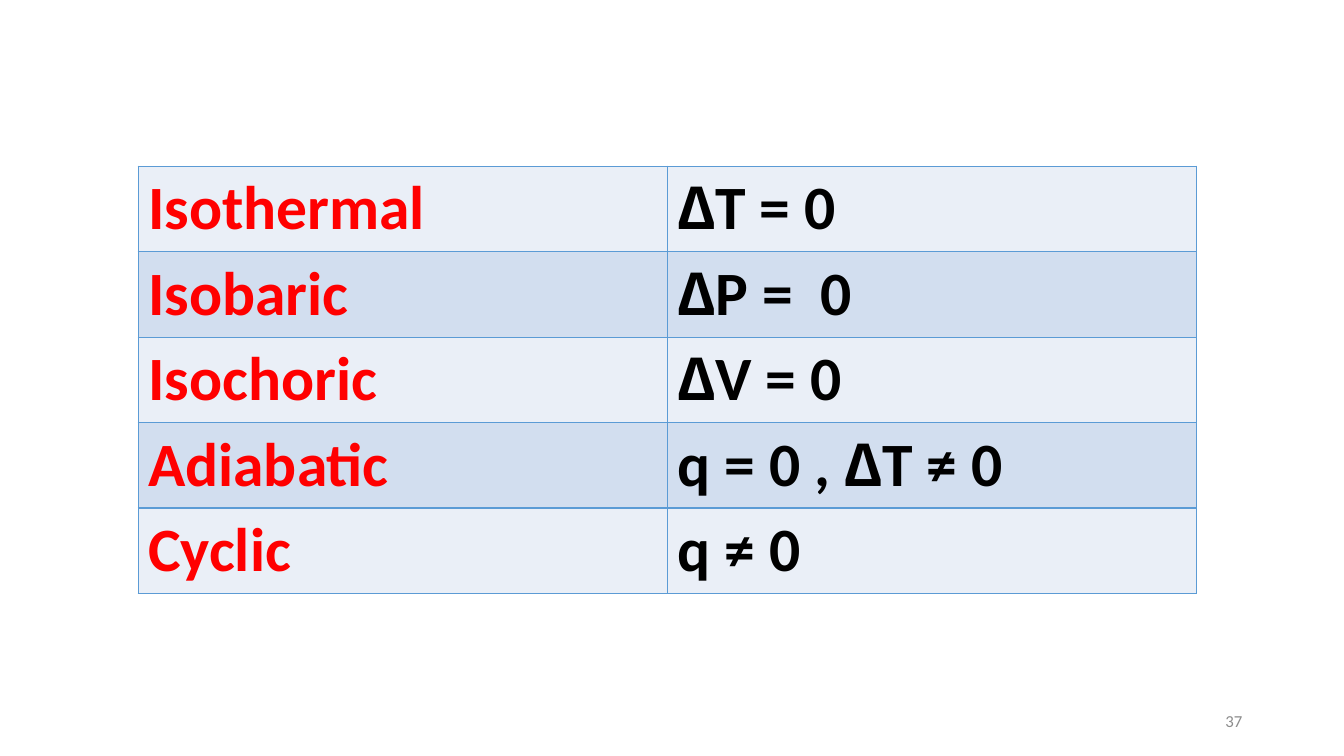
from lxml.etree import SubElement
from pptx import Presentation
from pptx.dml.color import RGBColor
from pptx.enum.text import MSO_ANCHOR, PP_ALIGN
from pptx.oxml.ns import qn
from pptx.util import Inches, Pt

PROCESSES = [
    ("Isothermal", "∆T = 0"),
    ("Isobaric", "∆P =  0"),
    ("Isochoric", "∆V = 0"),
    ("Adiabatic", "q = 0 , ∆T ≠ 0"),
    ("Cyclic", "q ≠ 0"),
]
PAGE = "37"

RED = RGBColor(0xFF, 0x00, 0x00)
BLACK = RGBColor(0x00, 0x00, 0x00)
GRAY = RGBColor(0x8C, 0x8C, 0x8C)
BORDER = RGBColor(0x5B, 0x9B, 0xD5)
BANDS = [RGBColor(0xEA, 0xEF, 0xF7), RGBColor(0xD2, 0xDE, 0xEF)]
COL_W, ROW_H = 5.25, 0.84


def add_text(p, text, size=44, color=BLACK, bold=True):
    before, delta, after = text.partition("∆")
    for part, font in ((before, "Calibri"), (delta, "Arial"), (after, "Calibri")):
        if part:
            r = p.add_run()
            r.text = part
            r.font.name = font
            r.font.size = Pt(size)
            r.font.bold = bold
            r.font.color.rgb = color


def add_borders(cell):
    tc_pr = cell._tc.get_or_add_tcPr()
    for i, side in enumerate(("a:lnL", "a:lnR", "a:lnT", "a:lnB")):
        ln = SubElement(tc_pr, qn(side), w=str(Pt(1)))
        fill = SubElement(ln, qn("a:solidFill"))
        SubElement(fill, qn("a:srgbClr"), val=str(BORDER))
        tc_pr.insert(i, ln)


prs = Presentation()
prs.slide_width, prs.slide_height = Inches(13.33), Inches(7.5)
s = prs.slides.add_slide(prs.slide_layouts[6])

table = s.shapes.add_table(
    len(PROCESSES), 2, Inches(1.37), Inches(1.65),
    Inches(2 * COL_W), Inches(len(PROCESSES) * ROW_H)).table
table.first_row = False
for col in table.columns:
    col.width = Inches(COL_W)
for i, process in enumerate(PROCESSES):
    table.rows[i].height = Inches(ROW_H)
    for j, (text, color) in enumerate(zip(process, (RED, BLACK))):
        cell = table.cell(i, j)
        cell.fill.solid()
        cell.fill.fore_color.rgb = BANDS[i % 2]
        add_borders(cell)
        add_text(cell.text_frame.paragraphs[0], text, color=color)

tf = s.shapes.add_textbox(Inches(9.42), Inches(6.95), Inches(3), Inches(0.4)).text_frame
tf.word_wrap = True
tf.vertical_anchor = MSO_ANCHOR.MIDDLE
p = tf.paragraphs[0]
p.alignment = PP_ALIGN.RIGHT
add_text(p, PAGE, size=12, color=GRAY, bold=False)

prs.save("out.pptx")
